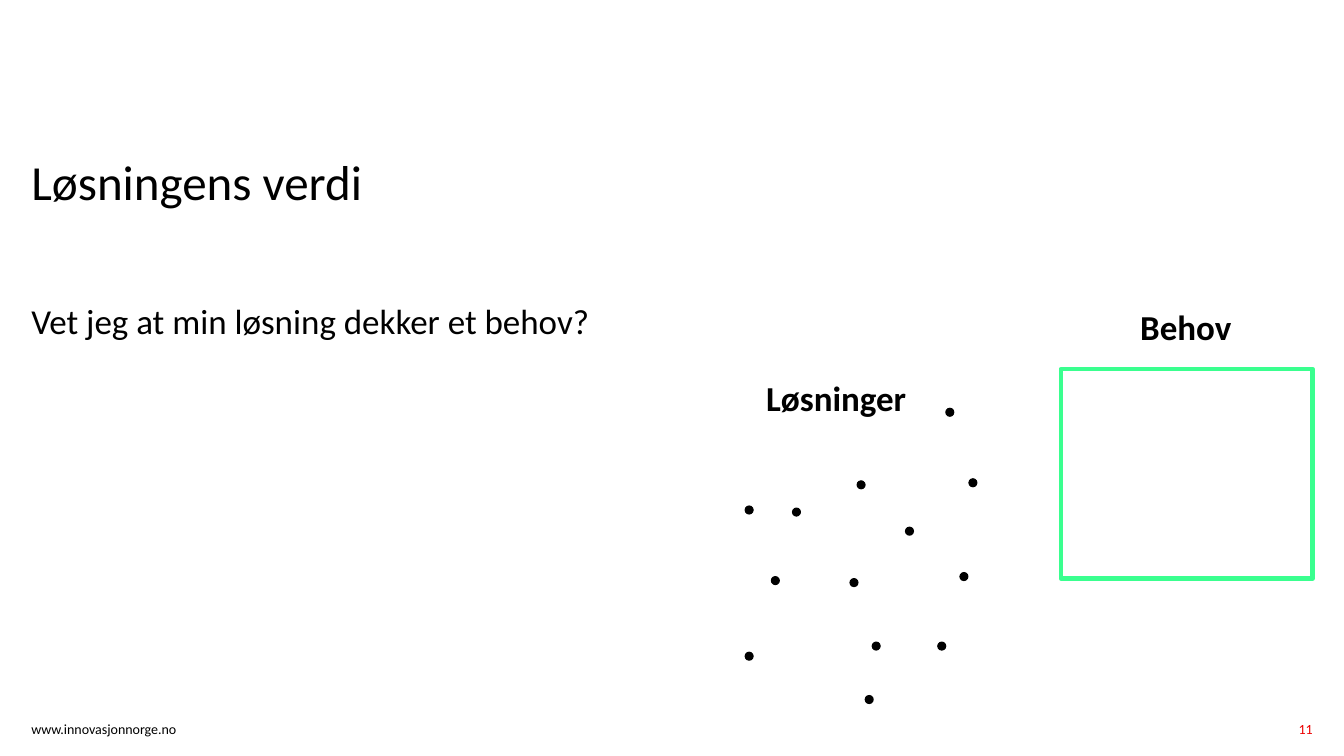
from pptx import Presentation
from pptx.dml.color import RGBColor
from pptx.enum.shapes import MSO_SHAPE
from pptx.enum.text import MSO_ANCHOR, MSO_AUTO_SIZE, PP_ALIGN
from pptx.util import Inches, Pt

OVAL, RECT = MSO_SHAPE.OVAL, MSO_SHAPE.RECTANGLE
LEFT, RIGHT = PP_ALIGN.LEFT, PP_ALIGN.RIGHT
TOP = MSO_ANCHOR.TOP
FIXED, GROW = MSO_AUTO_SIZE.NONE, MSO_AUTO_SIZE.SHAPE_TO_FIT_TEXT
COLORS = {"ink": "000000", "red": "ED0000", "green": "3AFF8F"}
DOTS = [
    (67.37, 69.73), (58.96, 67.2), (63.24, 76.53), (57.39, 76.27),
    (63.77, 63.6), (55.44, 66.93), (71.42, 75.73), (64.89, 84.93),
    (69.77, 84.93), (70.37, 54), (55.44, 86.27), (64.37, 92),
    (72.09, 63.33),
]


class Deck:
    """Draws styled elements on a slide, with lengths in percent of its size."""

    def __init__(self, font):
        self.font = font
        self.prs = Presentation()
        self.prs.slide_width, self.prs.slide_height = Inches(13.33), Inches(7.5)
        self.slide = self.prs.slides.add_slide(self.prs.slide_layouts[1])

    def color(self, name):
        return RGBColor.from_string(COLORS[name])

    def place(self, x, y, w, h):
        wide, high = self.prs.slide_width, self.prs.slide_height
        return [round(part * full / 100)
                for part, full in zip((x, y, w, h), (wide, high, wide, high))]

    def style(self, frame, text, size, color="ink", bold=False, align=LEFT):
        frame.text = text
        frame.vertical_anchor = TOP
        para = frame.paragraphs[0]
        para.alignment = align
        font = para.runs[0].font
        font.name, font.size, font.bold = self.font, Pt(size), bold
        font.color.rgb = self.color(color)
        return para

    def trim(self, frame):
        frame.word_wrap, frame.auto_size = True, FIXED
        frame.margin_left = frame.margin_right = 0
        frame.margin_top = frame.margin_bottom = 0

    def holder(self, index, text, size, box):
        shape = self.slide.placeholders[index]
        shape.left, shape.top, shape.width, shape.height = self.place(*box)
        self.trim(shape.text_frame)
        para = self.style(shape.text_frame, text, size)
        para.line_spacing, para.space_before = 0.9, Pt(0)
        return para

    def title(self, text, box):
        self.holder(0, text, 35, box)

    def body(self, text, box):
        props = self.holder(1, text, 25, box)._p.get_or_add_pPr()
        props.set("marL", "0")
        props.set("indent", "0")
        props.append(props.makeelement(
            "{http://schemas.openxmlformats.org/drawingml/2006/main}buNone", {}))

    def note(self, text, box, color="ink", align=LEFT):
        frame = self.slide.shapes.add_textbox(*self.place(*box)).text_frame
        self.trim(frame)
        self.style(frame, text, 10, color, align=align)

    def label(self, text, box):
        frame = self.slide.shapes.add_textbox(*self.place(*box)).text_frame
        frame.word_wrap, frame.auto_size = False, GROW
        self.style(frame, text, 25, bold=True)

    def shape(self, kind, box, line, width, fill=None):
        shape = self.slide.shapes.add_shape(kind, *self.place(*box))
        shape.shadow.inherit = False
        if fill:
            shape.fill.solid()
            shape.fill.fore_color.rgb = self.color(fill)
        else:
            shape.fill.background()
        shape.line.color.rgb = self.color(line)
        shape.line.width = Pt(width)

    def dot(self, x, y):
        self.shape(OVAL, (x, y, 0.6, 1.07), "ink", 0.75, "ink")


def main():
    deck = Deck("Calibri")
    deck.title("Løsningens verdi", (2.33, 20.93, 42.46, 18.8))
    deck.body("Vet jeg at min løsning dekker et behov?",
              (2.33, 40.27, 95.35, 18.8))
    deck.note("www.innovasjonnorge.no", (2.33, 95.33, 21.38, 2.53))
    deck.note("11", (89.57, 95.33, 8.1, 3.2), "red", RIGHT)
    deck.shape(RECT, (78.92, 48.8, 18.75, 27.73), "green", 3)
    deck.label("Løsninger", (56.26, 49.2, 12.08, 6.93))
    deck.label("Behov", (84.1, 39.73, 8.4, 6.93))
    for x, y in DOTS:
        deck.dot(x, y)
    deck.prs.save("out.pptx")


if __name__ == "__main__":
    main()
